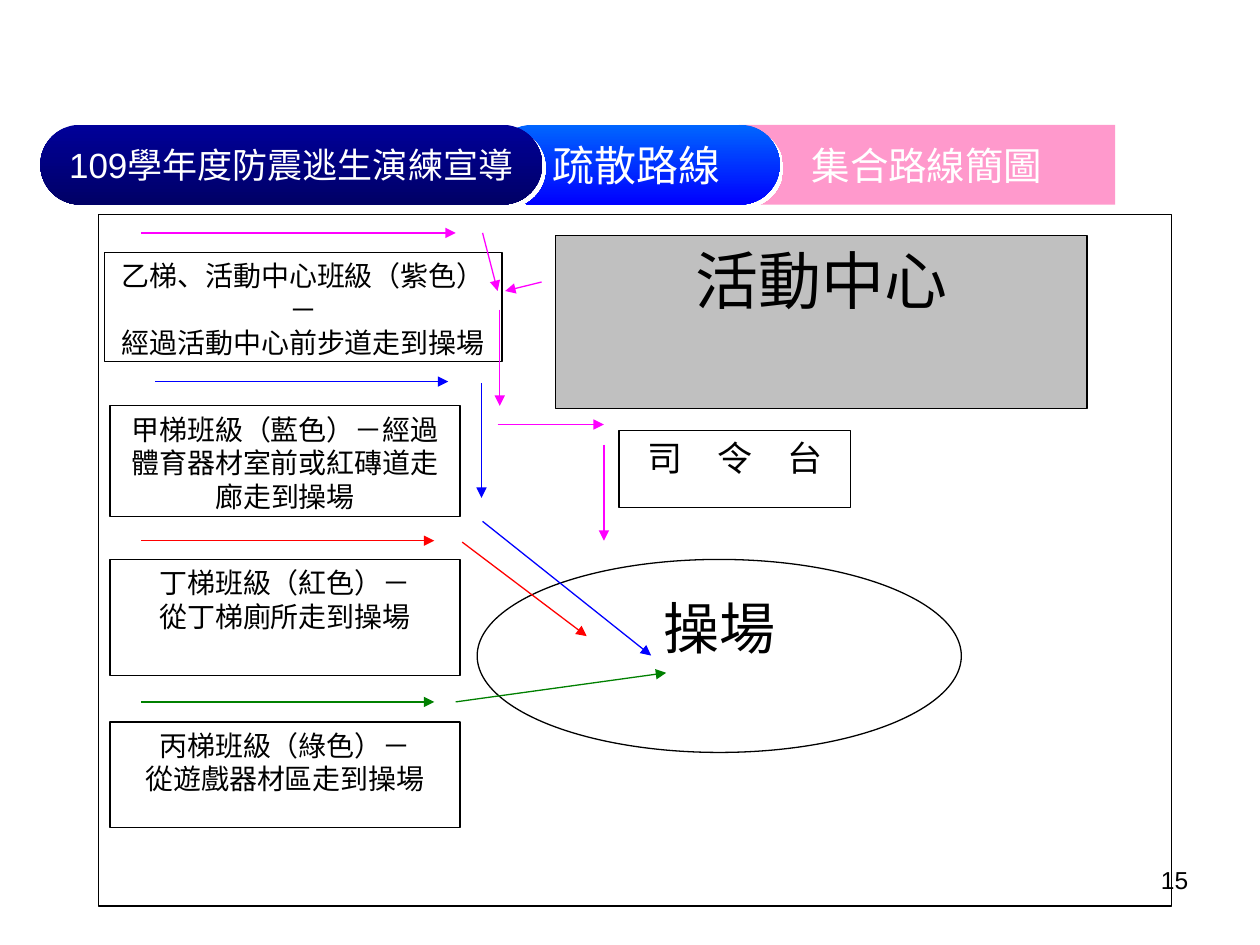
import pptx
import pptx.util
import pptx.oxml
import pptx.oxml.ns
import pptx.dml.color
import pptx.enum.shapes
import pptx.enum.text
import lxml.etree

HUES = {"black": "000000", "white": "FFFFFF", "gray": "C0C0C0", "pink": "FF99CC",
        "sky": "0066FF", "blue": "0000FF", "navy": "000099", "night": "000066",
        "red": "FF0000", "purple": "FF00FF", "green": "008000"}
SHAPE = pptx.enum.shapes.MSO_SHAPE
ALIGN = pptx.enum.text.PP_ALIGN
ANCHOR = pptx.enum.text.MSO_ANCHOR
WIDE, HIGH = pptx.util.Inches(10), pptx.util.Inches(7.5)
PAGE = (0, 0, WIDE, HIGH)


def hue(name):
    """Return the named colour."""
    return pptx.dml.color.RGBColor.from_string(HUES[name])


def spot(box, x, y):
    """Turn percent shares of a box into a point."""
    left, top, wide, high = box
    return int(left + wide * x / 100), int(top + high * y / 100)


def part(box, x, y, w, h):
    """Turn percent shares of a box into an inner box."""
    return (*spot(box, x, y), int(box[2] * w / 100), int(box[3] * h / 100))


def write(shape, lines, size, font, tint, align=ALIGN.CENTER, anchor=ANCHOR.TOP, wrap=True):
    """Fill a shape with evenly formatted paragraphs."""
    frame = shape.text_frame
    frame.word_wrap = wrap
    frame.auto_size = pptx.enum.text.MSO_AUTO_SIZE.NONE
    frame.vertical_anchor = anchor
    frame.text = "\n".join(lines)
    for para in frame.paragraphs:
        para.alignment = align
        para.font.size = pptx.util.Pt(size)
        para.font.name = font
        para.font.color.rgb = hue(tint)


def glow(shape):
    """Give a tab its white edge shadow."""
    shape.shadow.inherit = False
    tag = pptx.oxml.ns.qn
    effects = shape.element.spPr.find(tag("a:effectLst"))
    outer = lxml.etree.SubElement(effects, tag("a:outerShdw"), dist="35560",
                                  dir="2700000", algn="ctr", rotWithShape="0")
    lxml.etree.SubElement(outer, tag("a:srgbClr"), val=HUES["white"])


def tab(shape, text, size, font, fills, wrap=False):
    """Style one rounded tab of the heading."""
    if len(fills) == 1:
        shape.fill.solid()
        shape.fill.fore_color.rgb = hue(fills[0])
    else:
        shape.fill.gradient()
        shape.fill.gradient_angle = 270
        for stop, name in zip(shape.fill.gradient_stops, fills):
            stop.color.rgb = hue(name)
    shape.line.fill.background()
    glow(shape)
    write(shape, [text], size, font, "white", anchor=ANCHOR.MIDDLE, wrap=wrap)


def heading(slide, box):
    """Lay three overlapping tabs, the slide title at the back."""
    title = slide.shapes.title
    title.left, title.top, title.width, title.height = part(box, 65, 0, 35, 100)
    title.element.spPr.append(pptx.oxml.parse_xml(
        '<a:prstGeom xmlns:a="http://schemas.openxmlformats.org/drawingml/2006/main" '
        'prst="roundRect"><a:avLst><a:gd name="adj" fmla="val 50000"/></a:avLst></a:prstGeom>'))
    tab(title, "集合路線簡圖", 22, "Noto Sans CJK SC", ["pink"])
    for x, w, text, size, font, fills, wrap in [
            (42.1, 26.7, "疏散路線", 24, "Noto Sans CJK JP", ["sky", "blue"], False),
            (0, 46.7, "109學年度防震逃生演練宣導", 20, "Arial", ["navy", "night"], True)]:
        shape = slide.shapes.add_shape(SHAPE.ROUNDED_RECTANGLE, *part(box, x, 0, w, 100))
        shape.adjustments[0] = 0.5
        tab(shape, text, size, font, fills, wrap)


def place(slide, box, lines=(), size=16, font="Calibri", fill="white", kind=SHAPE.RECTANGLE):
    """Draw one outlined place on the map."""
    shape = slide.shapes.add_shape(kind, *box)
    shape.shadow.inherit = False
    if lines:
        shape.fill.solid()
        shape.fill.fore_color.rgb = hue(fill)
        write(shape, lines, size, font, "black")
    else:
        shape.fill.background()
    shape.line.color.rgb = hue("black")
    shape.line.width = pptx.util.Pt(0.75)


def arrow(slide, start, end, tint):
    """Draw one arrow of a route."""
    line = slide.shapes.add_connector(
        pptx.enum.shapes.MSO_CONNECTOR.STRAIGHT, *start, *end)
    line.line.color.rgb = hue(tint)
    line.line.width = pptx.util.Pt(0.75)
    tag = pptx.oxml.ns.qn
    props = line.element.spPr
    lxml.etree.SubElement(props.find(tag("a:ln")), tag("a:tailEnd"), type="triangle")
    lxml.etree.SubElement(props, tag("a:effectLst"))


def plan(slide, box):
    """Draw the map of places and escape routes."""
    place(slide, box)
    place(slide, part(box, 48.5, 31.3, 21.6, 11.1), ["司　令　台"], 20)
    place(slide, part(box, 35.3, 49.9, 45.1, 27.9), ["操場"], 32, kind=SHAPE.OVAL)
    place(slide, part(box, 42.6, 3.1, 49.5, 25), ["活動中心"], 36, "Arial", "gray")
    for x, y, w, h, lines in [
            (0.6, 5.5, 37, 15.8, ["乙梯、活動中心班級（紫色）－", "經過活動中心前步道走到操場"]),
            (1.1, 27.7, 32.6, 16, ["甲梯班級（藍色）－經過體育器材室前或紅磚道走廊走到操場"]),
            (1.1, 49.9, 32.6, 16.8, ["丁梯班級（紅色）－", "從丁梯廁所走到操場"]),
            (1.1, 73.4, 32.6, 15.3, ["丙梯班級（綠色）－", "從遊戲器材區走到操場"])]:
        place(slide, part(box, x, y, w, h), lines)
    routes = {
        "purple": [(4, 2.7, 33.3, 2.7), (35.8, 2.7, 37.2, 11.1), (41.3, 9.8, 37.9, 11.1),
                   (37.4, 13.8, 37.4, 27.7), (37.2, 30.4, 47.1, 30.4),
                   (47.1, 33.3, 47.1, 47.2)],
        "blue": [(5.3, 24.2, 32.6, 24.2), (35.7, 24.4, 35.7, 41), (35.8, 44.4, 51.5, 63.8)],
        "red": [(4, 47.2, 31.3, 47.2), (33.9, 47.4, 45.5, 61)],
        "green": [(4, 70.5, 31.3, 70.5), (33.3, 70.5, 52.9, 66.3)]}
    for tint, legs in routes.items():
        for x, y, right, low in legs:
            arrow(slide, spot(box, x, y), spot(box, right, low), tint)


def number(slide, box):
    """Write the page number."""
    write(slide.shapes.add_textbox(*box), ["15"], 14, "Arial", "black", ALIGN.RIGHT)


def main():
    """Build and save the slide."""
    deck = pptx.Presentation()
    deck.slide_width, deck.slide_height = WIDE, HIGH
    slide = deck.slides.add_slide(deck.slide_layouts[5])
    number(slide, part(PAGE, 72, 90.9, 23.3, 6.9))
    heading(slide, part(PAGE, 3.2, 13.2, 85.3, 8.45))
    plan(slide, part(PAGE, 7.8, 22.67, 85.2, 73.2))
    deck.save("out.pptx")


if __name__ == "__main__":
    main()
